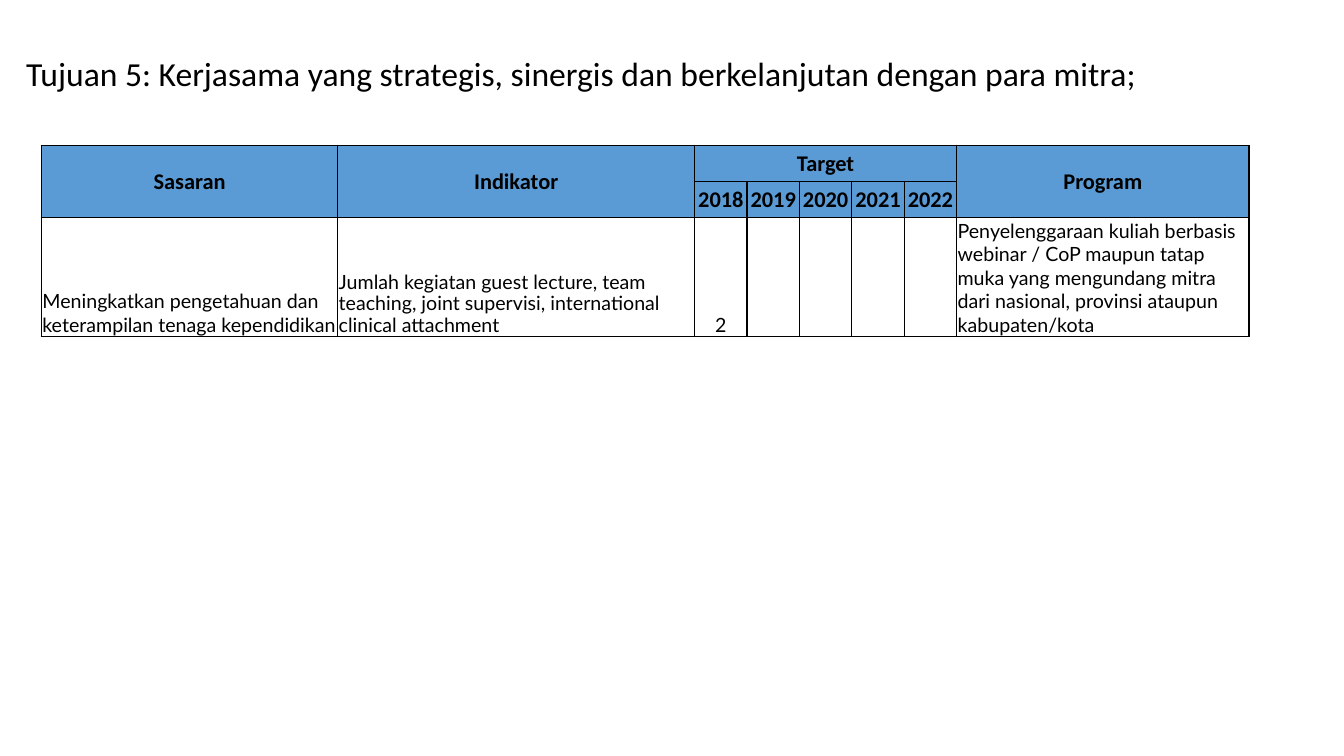
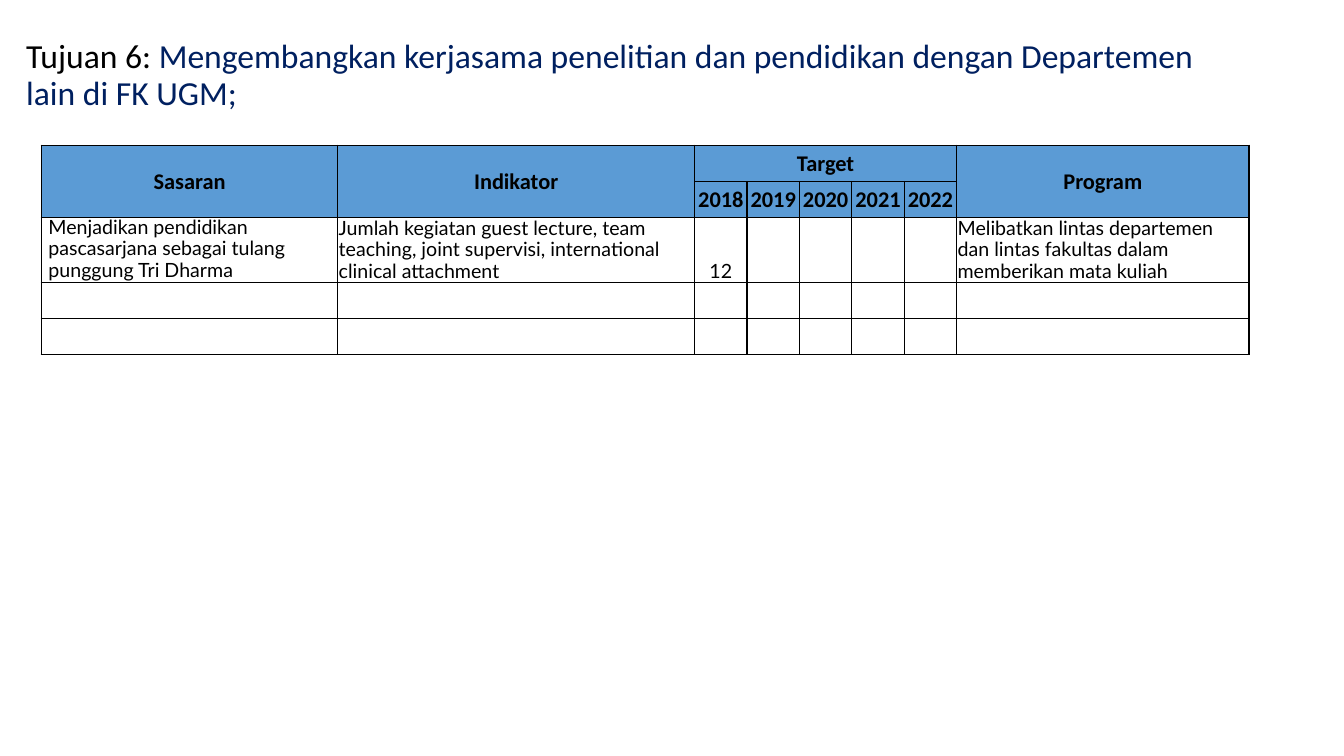
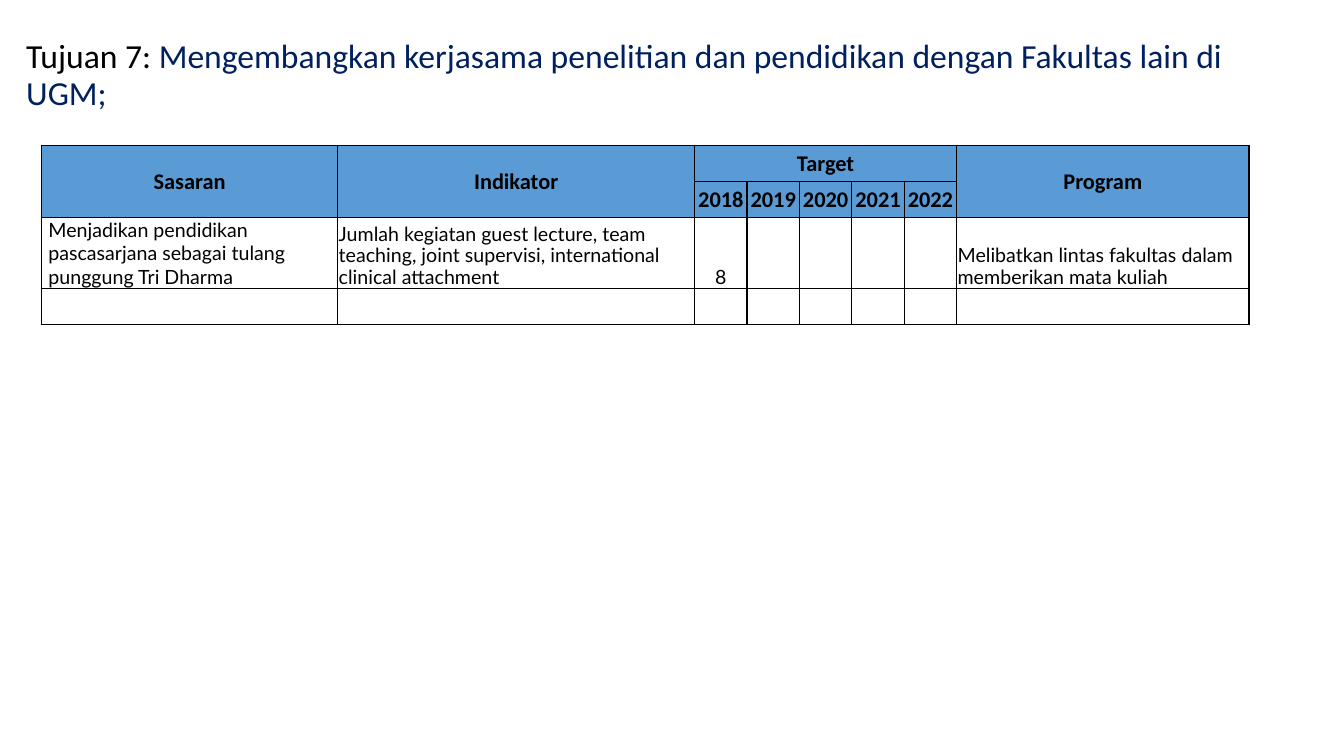
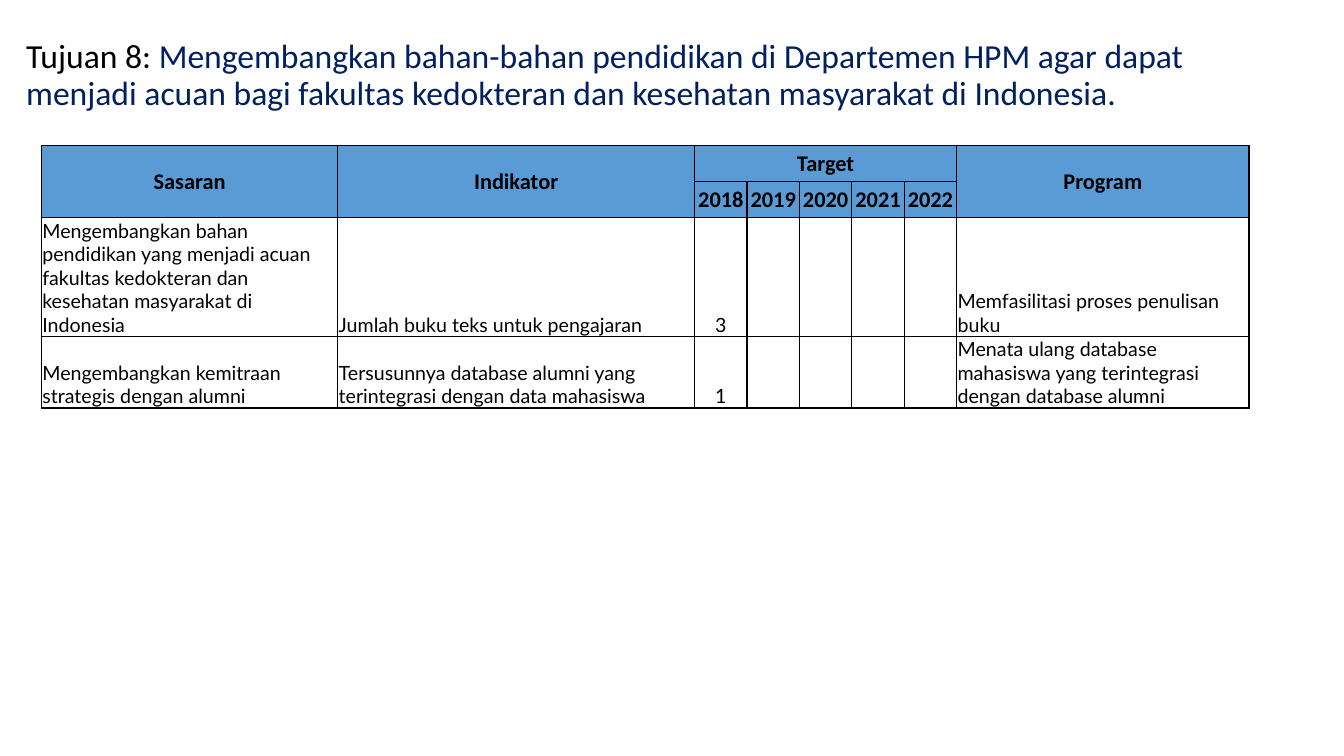
from dataclasses import dataclass
from lxml.etree import SubElement
from pptx import Presentation
from pptx.dml.color import RGBColor as RGB
from pptx.enum.text import MSO_ANCHOR as Anchor, MSO_AUTO_SIZE as Fit, PP_ALIGN as Align
from pptx.oxml.ns import qn
from pptx.util import Emu, Pt


@dataclass(frozen=True)
class Theme:
    ink: RGB = RGB(0, 0, 0)
    navy: RGB = RGB(0x00, 0x20, 0x60)
    blue: RGB = RGB(0x5B, 0x9B, 0xD5)
    head_font: str = "Calibri"
    body_font: str = "Lato"
    title: int = 24
    head: int = 16
    body: int = 14
    line: int = 1
    tight: float = 0.9


@dataclass(frozen=True)
class Goal:
    """One table row; tight lists the columns with closer lines."""
    aim: str
    mark: str
    count: str
    plan: str
    height: int
    tight: tuple = ()
    inset: bool = False


THEME = Theme()
COLS = [294, 354] + [52] * 5 + [290]
YEARS = range(2018, 2023)
ROW = 36
TITLE_BOX = dict(left=16, top=40, width=1226, height=71)
TABLE_AT = (41, 144)
PLAIN = dict(margin_left=1, margin_top=1, margin_right=1, margin_bottom=0)
INSET = dict(margin_left=7, margin_top=0, margin_right=7, margin_bottom=0)
LECTURE = ("Jumlah kegiatan guest lecture, team teaching, joint supervisi, "
           "international clinical attachment")
SPINE = "Menjadikan pendidikan pascasarjana sebagai tulang punggung Tri Dharma"


def px(n):
    """100 px make one inch."""
    return Emu(n * 9144)


def apply(item, values):
    for name, value in values.items():
        setattr(item, name, value)


def scale(values):
    return {name: px(n) for name, n in values.items()}


def add_run(par, text, color, font, size, bold=False):
    run = par.add_run()
    run.text = text
    apply(run.font, dict(name=font, size=Pt(size), bold=bold))
    run.font.color.rgb = color


# Title placeholder: black label, then the goal in its own colour
def add_title(slide, label, text, color):
    title = slide.shapes.title
    apply(title, scale(TITLE_BOX))
    frame = title.text_frame
    apply(frame, dict(word_wrap=True, auto_size=Fit.NONE,
                      vertical_anchor=Anchor.MIDDLE))
    par = frame.paragraphs[0]
    apply(par, dict(alignment=Align.LEFT, line_spacing=THEME.tight))
    for words, tone in ((label + " ", THEME.ink), (text, color)):
        add_run(par, words, tone, THEME.head_font, THEME.title)


# Table cells
def add_edges(cell):
    props = cell._tc.get_or_add_tcPr()
    for side in ("a:lnL", "a:lnR", "a:lnT", "a:lnB"):
        edge = SubElement(props, qn(side), w=str(Pt(THEME.line)))
        fill = SubElement(edge, qn("a:solidFill"))
        SubElement(fill, qn("a:srgbClr"), val=str(THEME.ink))


def style_cell(cell, is_head):
    add_edges(cell)
    apply(cell, scale(PLAIN))
    cell.vertical_anchor = Anchor.MIDDLE if is_head else Anchor.BOTTOM
    if is_head:
        cell.fill.solid()
        cell.fill.fore_color.rgb = THEME.blue
    else:
        cell.fill.background()


def fill_head(table):
    labels = [(0, 0, "Sasaran"), (0, 1, "Indikator"), (0, 2, "Target"),
              (0, 7, "Program")]
    labels += [(1, col, str(year)) for col, year in enumerate(YEARS, 2)]
    for row, col, text in labels:
        par = table.cell(row, col).text_frame.paragraphs[0]
        par.alignment = Align.CENTER
        add_run(par, text, THEME.ink, THEME.head_font, THEME.head, True)
    for col in (0, 1, 7):
        table.cell(0, col).merge(table.cell(1, col))
    table.cell(0, 2).merge(table.cell(0, 6))


def fill_goal(table, row, goal):
    texts = {0: goal.aim, 1: goal.mark, 2: goal.count, 7: goal.plan}
    for col, text in texts.items():
        par = table.cell(row, col).text_frame.paragraphs[0]
        par.alignment = Align.CENTER if col == 2 else Align.LEFT
        par.line_spacing = THEME.tight if col in goal.tight else 1.0
        add_run(par, text, THEME.ink, THEME.body_font, THEME.body)
    if goal.inset:
        cell = table.cell(row, 0)
        apply(cell, scale(INSET))
        cell.vertical_anchor = Anchor.TOP


def add_goals(slide, goals, blanks):
    heights = [ROW, ROW] + [goal.height for goal in goals] + [ROW] * blanks
    size = (*TABLE_AT, sum(COLS), sum(heights))
    table = slide.shapes.add_table(len(heights), len(COLS), *map(px, size)).table
    apply(table, dict(first_row=False, horz_banding=False))
    for col, width in zip(table.columns, COLS):
        col.width = px(width)
    for index, (row, height) in enumerate(zip(table.rows, heights)):
        row.height = px(height)
        for cell in row.cells:
            style_cell(cell, index < 2)
    fill_head(table)
    for row, goal in enumerate(goals, 2):
        fill_goal(table, row, goal)


# Slide content: label, title, title colour, goals, blank rows
PAGES = [
    ("Tujuan 5:",
     "Kerjasama yang strategis, sinergis dan berkelanjutan dengan para mitra;",
     THEME.ink,
     [Goal("Meningkatkan pengetahuan dan keterampilan tenaga kependidikan",
           LECTURE, "2",
           "Penyelenggaraan kuliah berbasis webinar / CoP maupun tatap muka yang "
           "mengundang mitra dari nasional, provinsi ataupun kabupaten/kota",
           117, (1, 2))], 0),
    ("Tujuan 6:",
     "Mengembangkan kerjasama penelitian dan pendidikan dengan Departemen lain "
     "di FK UGM;",
     THEME.navy,
     [Goal(SPINE, LECTURE, "12",
           "Melibatkan lintas departemen dan lintas fakultas dalam memberikan "
           "mata kuliah", 64, (0, 1, 2, 7), True)], 2),
    ("Tujuan 7:",
     "Mengembangkan kerjasama penelitian dan pendidikan dengan Fakultas lain "
     "di UGM;",
     THEME.navy,
     [Goal(SPINE, LECTURE, "8",
           "Melibatkan lintas fakultas dalam memberikan mata kuliah",
           70, (1, 2, 7), True)], 1),
    ("Tujuan 8:",
     "Mengembangkan bahan-bahan pendidikan di Departemen HPM agar dapat menjadi "
     "acuan bagi fakultas kedokteran dan kesehatan masyarakat di Indonesia.",
     THEME.navy,
     [Goal("Mengembangkan bahan pendidikan yang menjadi acuan fakultas kedokteran "
           "dan kesehatan masyarakat di Indonesia",
           "Jumlah buku teks untuk pengajaran", "3",
           "Memfasilitasi proses penulisan buku", 117),
      Goal("Mengembangkan kemitraan strategis dengan alumni",
           "Tersusunnya database alumni yang terintegrasi dengan data mahasiswa",
           "1",
           "Menata ulang database mahasiswa yang terintegrasi dengan database "
           "alumni", 71)], 0),
]


def main():
    deck = Presentation()
    apply(deck, dict(slide_width=px(1333), slide_height=px(750)))
    for label, text, color, goals, blanks in PAGES:
        slide = deck.slides.add_slide(deck.slide_layouts[5])
        add_title(slide, label, text, color)
        add_goals(slide, goals, blanks)
    deck.save("out.pptx")


if __name__ == "__main__":
    main()
